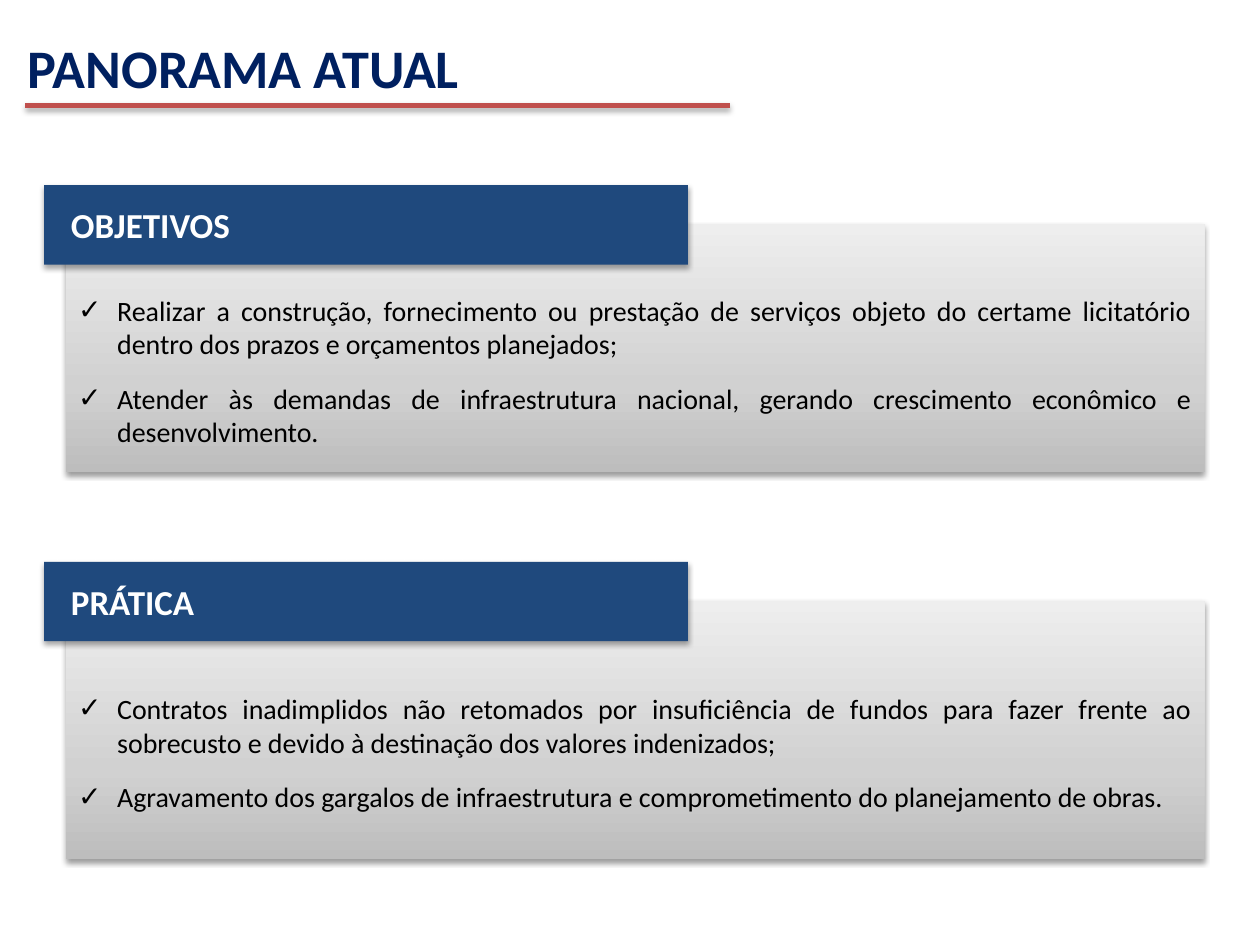
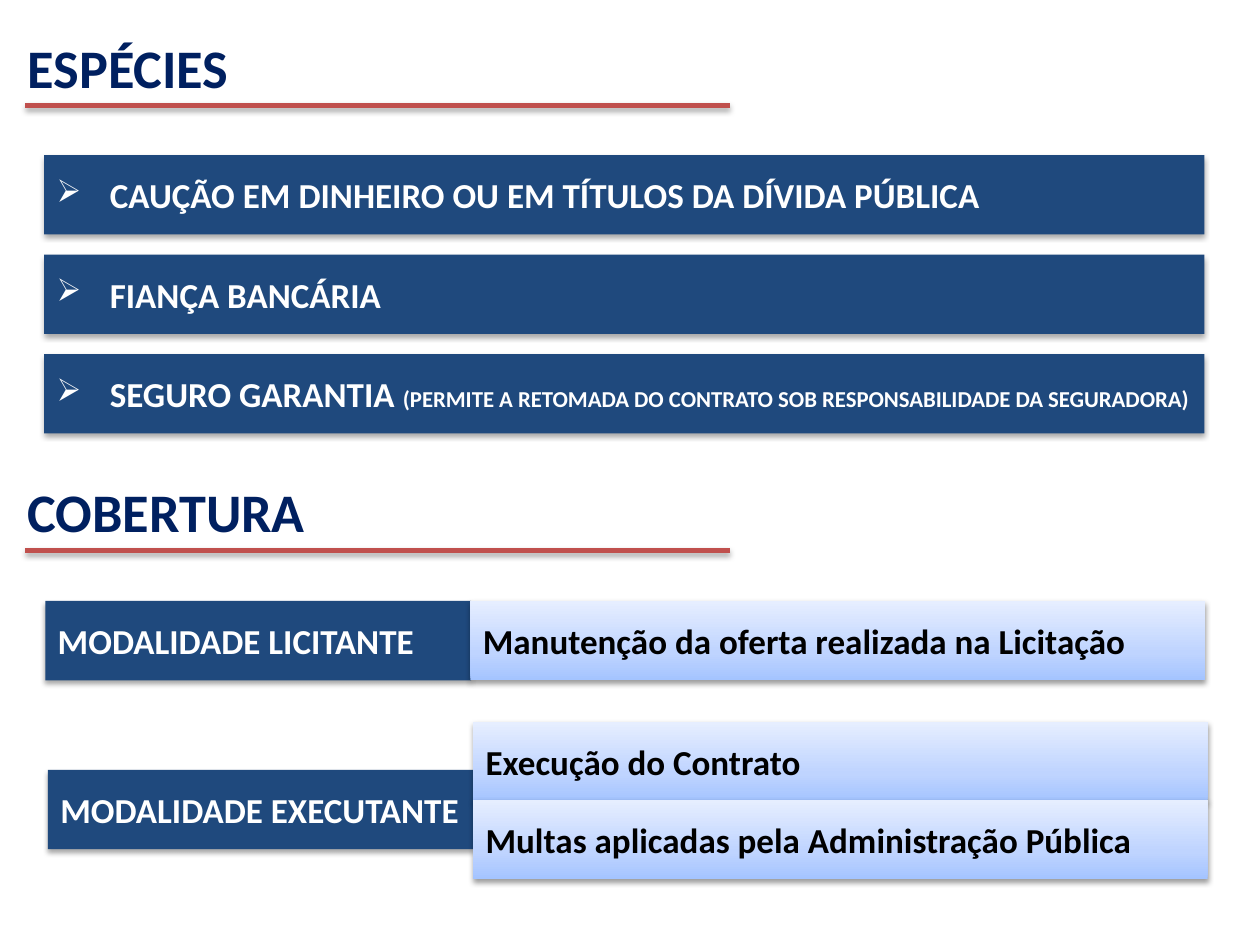
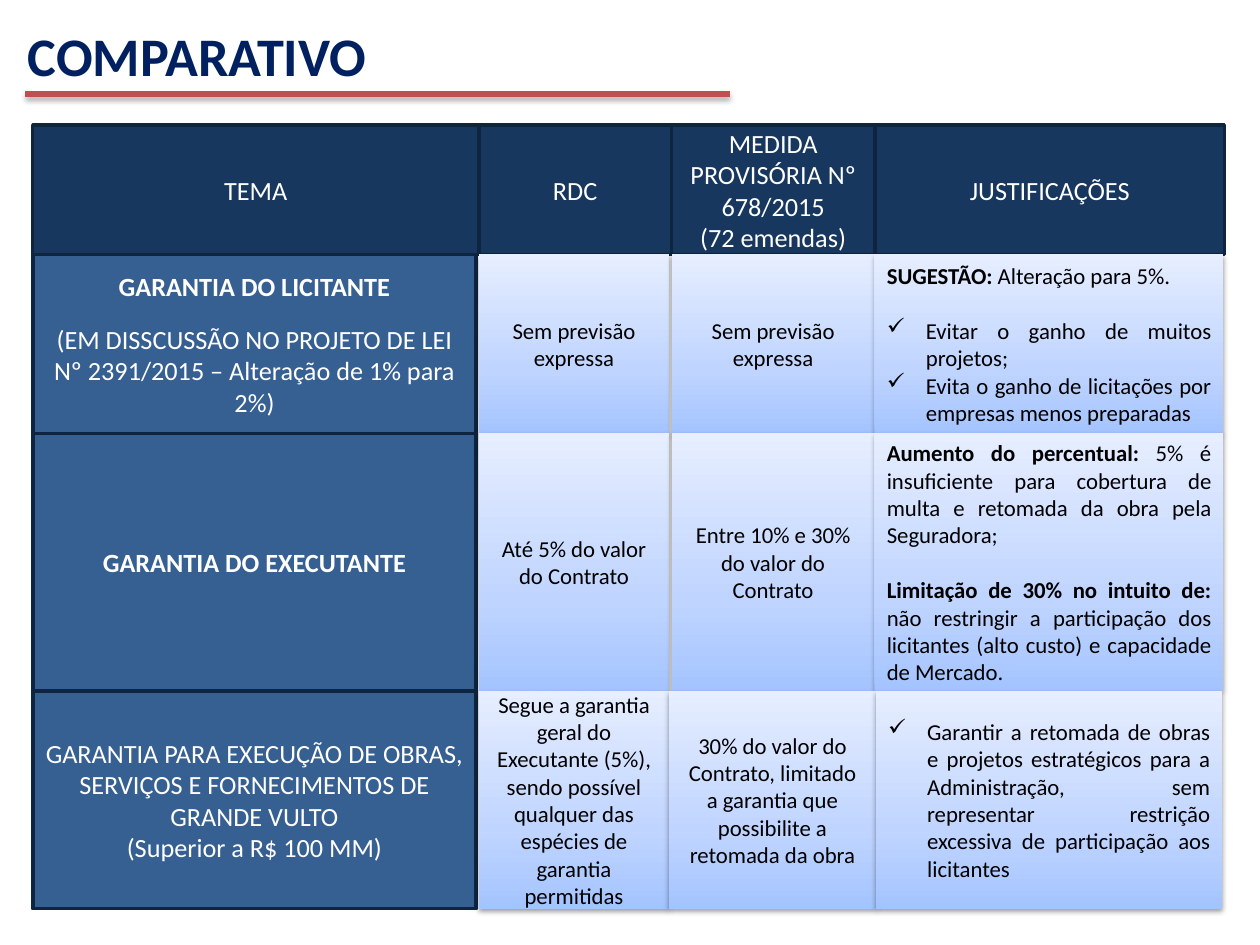
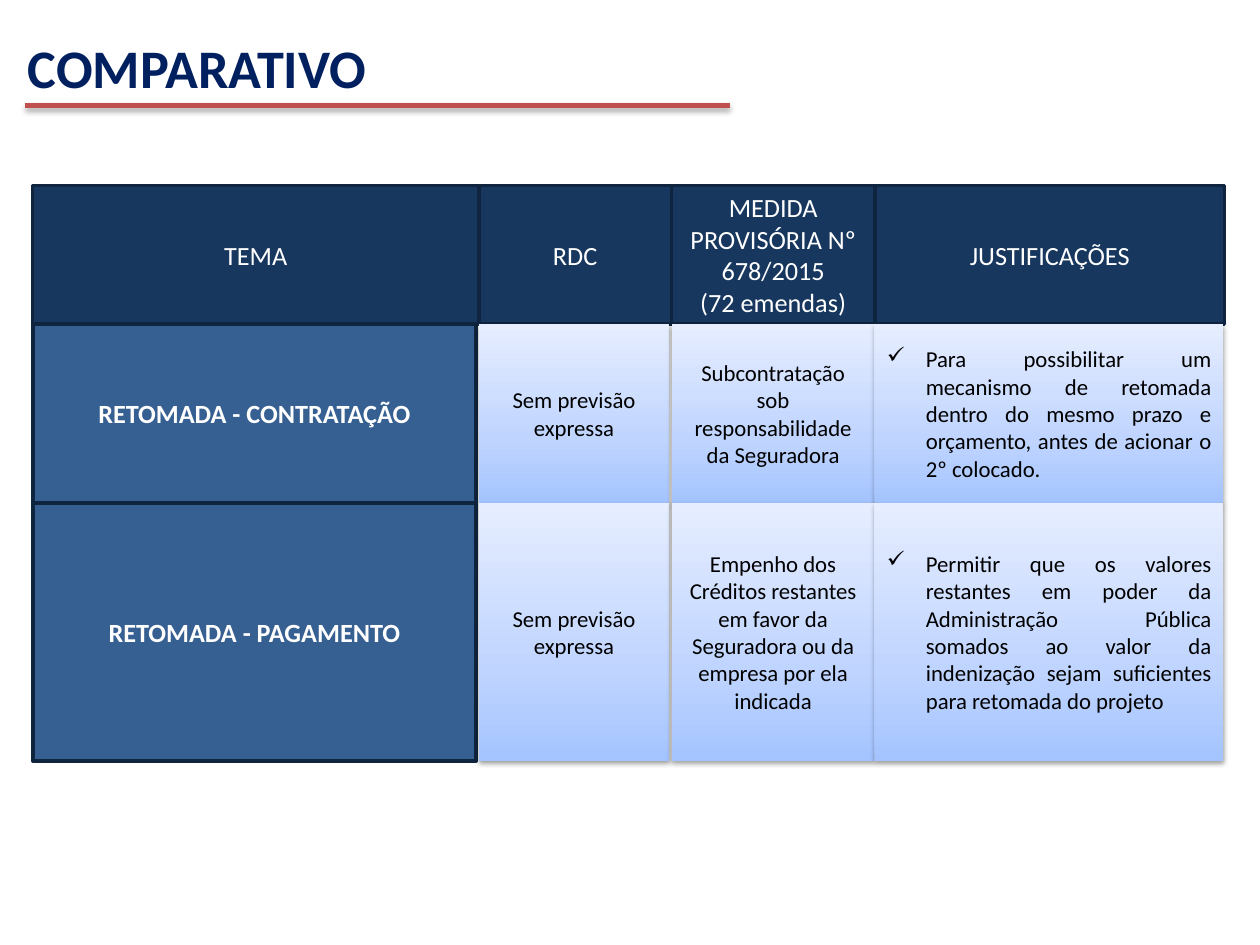
"""Build four slides on contract guarantees."""
from copy import deepcopy
from dataclasses import dataclass, replace
from itertools import accumulate
from typing import Any, NamedTuple, Optional

from lxml import etree
from pptx import Presentation
from pptx import util as u
from pptx.dml.color import RGBColor
from pptx.enum import shapes, text
from pptx.oxml import ns

NAVY = RGBColor(0x00, 0x20, 0x60)
BLUE = RGBColor(0x1F, 0x49, 0x7D)
STEEL = RGBColor(0x37, 0x60, 0x92)
DEEP = RGBColor(0x17, 0x37, 0x5E)
EDGE = RGBColor(0x0F, 0x24, 0x3E)
RED = RGBColor(0xC0, 0x50, 0x4D)
WHITE = RGBColor(0xFF, 0xFF, 0xFF)
BLACK = RGBColor(0x00, 0x00, 0x00)
GREYS = (RGBColor(0xBD, 0xBD, 0xBD), RGBColor(0xD1, 0xD1, 0xD1), RGBColor(0xEE, 0xEE, 0xEE))
SKIES = (RGBColor(0xA4, 0xC4, 0xFF), RGBColor(0xBF, 0xD4, 0xFF), RGBColor(0xE6, 0xEE, 0xFF))
STOPS = (0, 0.35, 1)
FONT = "Calibri"
CHECK, ARROW = "✓", "➢"
LEFT, MID, BOTH = text.PP_ALIGN.LEFT, text.PP_ALIGN.CENTER, text.PP_ALIGN.JUSTIFY
BAR = 45.36
HEADS = ((18.72, 254.88), (273.6, 110.16), (383.76, 116.2), (500.2, 199.44))
CELLS = ((18.72, 253.44), (273.6, 108.72), (383.76, 115.92), (499.68, 199.44))
LAST = (*CELLS[:2], (382.32, 118.08), (500.4, 198))


class Box(NamedTuple):
    """Place and size in points."""
    left: float
    top: float
    width: float
    height: float


class Run(NamedTuple):
    """A stretch of text; size 0 takes the style's size."""
    text: str
    bold: bool = False
    size: float = 0


class Line(NamedTuple):
    """A paragraph with its space before and bullet."""
    runs: tuple[Run, ...]
    gap: float = 0
    mark: str = ""


class Row(NamedTuple):
    """A grid row: height, cell texts and column spans."""
    height: float
    cells: tuple[list[Line], ...]
    cols: tuple[tuple[float, float], ...] = CELLS


@dataclass(frozen=True)
class Style:
    """Look of a box and its text."""
    fill: tuple[RGBColor, ...]
    ink: RGBColor
    size: float
    align: Any = LEFT
    edge: Optional[RGBColor] = None
    shade: int = 0
    drop: float = 0
    inset: float = 7.2
    head: float = 3.6
    hang: float = 22.32
    dot: int = 100


TAB = Style((BLUE,), WHITE, 20, shade=35, drop=1.8)
BADGE = replace(TAB, inset=15.3)
ITEM = replace(TAB, hang=30.5, dot=90)
PANEL = Style(GREYS, BLACK, 16, BOTH, shade=38, drop=1.6, head=29.1)
VALUE = Style(SKIES, BLACK, 20, shade=38, drop=1.6)
HEAD = Style((DEEP,), WHITE, 15, MID, EDGE)
THEME = replace(HEAD, fill=(STEEL,))
FACT = replace(VALUE, size=13, align=MID)
CAUSE = replace(FACT, align=BOTH)


def put(item: Any, **vals: Any) -> None:
    """Set attributes from format values."""
    for name, val in vals.items():
        setattr(item, name, val)


def one(words: str, bold: bool = False, gap: float = 0, mark: str = "") -> Line:
    """Make a paragraph of a single run."""
    return Line((Run(words, bold),), gap, mark)


def shade(item: Any, alpha: int, drop: float) -> None:
    """Add a downward shadow, or an empty effect list."""
    lst = etree.SubElement(item._element.spPr, ns.qn("a:effectLst"))
    if alpha:
        cast = etree.SubElement(lst, ns.qn("a:outerShdw"), blurRad=str(u.Pt(3.1)),
                                dist=str(u.Pt(drop)), dir="5400000", rotWithShape="0")
        tint = etree.SubElement(cast, ns.qn("a:srgbClr"), val=str(BLACK))
        etree.SubElement(tint, ns.qn("a:alpha"), val=str(alpha * 1000))


def blend(item: Any, tints: tuple[RGBColor, ...]) -> None:
    """Fill with a three-stop gradient rising from the bottom."""
    item.fill.gradient()
    item.fill.gradient_angle = 90
    lst = item._element.spPr.find(".//" + ns.qn("a:gsLst"))
    lst.insert(1, deepcopy(lst[0]))
    for stop, tint, pos in zip(item.fill.gradient_stops, tints, STOPS):
        stop.color.rgb = tint
        stop.position = pos


def place(item: Any, box: Box) -> None:
    """Move and size a shape."""
    put(item, **{name: u.Pt(val) for name, val in box._asdict().items()})


def write(item: Any, lines: list[Line], look: Style) -> None:
    """Write paragraphs into a shape."""
    frame = item.text_frame
    for num, line in enumerate(lines):
        para = frame.add_paragraph() if num else frame.paragraphs[0]
        if line.mark:
            props = para._p.get_or_add_pPr()
            props.set("marL", str(u.Pt(look.hang)))
            props.set("indent", str(-u.Pt(look.hang)))
            etree.SubElement(props, ns.qn("a:buSzPct"), val=str(look.dot * 1000))
            etree.SubElement(props, ns.qn("a:buChar"), char=line.mark)
        put(para, alignment=look.align, space_before=u.Pt(line.gap), space_after=u.Pt(0))
        for part in line.runs:
            run = para.add_run()
            run.text = part.text
            put(run.font, name=FONT, size=u.Pt(part.size or look.size), bold=part.bold)
            run.font.color.rgb = look.ink


def paint(item: Any, box: Box, look: Style, lines: list[Line]) -> None:
    """Format a shape or placeholder and fill in its text."""
    place(item, box)
    if len(look.fill) > 1:
        blend(item, look.fill)
    else:
        item.fill.solid()
        item.fill.fore_color.rgb = look.fill[0]
    if look.edge:
        item.line.color.rgb = look.edge
        item.line.width = u.Pt(2)
    else:
        item.line.fill.background()
    shade(item, look.shade, look.drop)
    put(item.text_frame, word_wrap=True, auto_size=text.MSO_AUTO_SIZE.NONE,
        vertical_anchor=text.MSO_ANCHOR.MIDDLE, margin_left=u.Pt(look.inset),
        margin_right=u.Pt(7.2), margin_top=u.Pt(look.head), margin_bottom=u.Pt(3.6))
    write(item, lines, look)


def rect(slide: Any, box: Box, look: Style, lines: list[Line]) -> None:
    """Add a formatted rectangle."""
    item = slide.shapes.add_shape(shapes.MSO_SHAPE.RECTANGLE, *map(u.Pt, box))
    paint(item, box, look, lines)


def title(slide: Any, words: str, top: float = 15.84, extra: bool = False) -> None:
    """Write a heading with its red rule."""
    box = Box(8.64, top, 527.04, 33.12)
    item = slide.shapes.add_textbox(*map(u.Pt, box)) if extra else slide.shapes.title
    place(item, box)
    put(item.text_frame, word_wrap=True, auto_size=text.MSO_AUTO_SIZE.NONE,
        vertical_anchor=text.MSO_ANCHOR.TOP)
    write(item, [one(words, True)], Style((), NAVY, 31))
    high = u.Pt(top + 44.4)
    rule = slide.shapes.add_connector(shapes.MSO_CONNECTOR.STRAIGHT,
                                      u.Pt(14.4), high, u.Pt(416.88), high)
    rule.line.color.rgb = RED
    rule.line.width = u.Pt(3)
    shade(rule, 35, 1.8)


def grid(slide: Any, top: float, high: float, rows: list[Row]) -> None:
    """Draw the comparison grid under its header row."""
    names = ([one("TEMA")], [one("RDC")],
             [one("MEDIDA PROVISÓRIA Nº 678/2015"), one("(72 emendas)")],
             [one("JUSTIFICAÇÕES")])
    rows = [Row(high, names, HEADS), *rows]
    tops = accumulate((row.height for row in rows), initial=top)
    for num, (row, y) in enumerate(zip(rows, tops)):
        looks = (THEME, FACT, FACT, CAUSE) if num else (HEAD,) * 4
        for (x, wide), look, lines in zip(row.cols, looks, row.cells):
            rect(slide, Box(x, y, wide, row.height), look, lines)


def outlook(slide: Any) -> None:
    """Slide 1: goals against practice."""
    title(slide, "PANORAMA ATUAL")
    parts = (
        (128.16, 141.84, "OBJETIVOS",
         "Realizar a construção, fornecimento ou prestação de serviços objeto do certame "
         "licitatório dentro dos prazos e orçamentos planejados;",
         "Atender às demandas de infraestrutura nacional, gerando crescimento econômico e "
         "desenvolvimento."),
        (343.44, 147.6, "PRÁTICA",
         "Contratos inadimplidos não retomados por insuficiência de fundos para fazer frente "
         "ao sobrecusto e devido à destinação dos valores indenizados;",
         "Agravamento dos gargalos de infraestrutura e comprometimento do planejamento de "
         "obras."),
    )
    bodies = list(slide.placeholders)[1:]
    for body, (top, high, name, first, then) in zip(bodies, parts):
        lines = [one(first, mark=CHECK), one(then, gap=12, mark=CHECK)]
        paint(body, Box(37.44, top, 650.88, high), PANEL, lines)
        rect(slide, Box(25.2, top - 22.32, 367.92, BAR), BADGE, [one(name, True)])


def kinds(slide: Any) -> None:
    """Slide 2: kinds of guarantee and their cover."""
    title(slide, "ESPÉCIES")
    items = (
        (Run("CAUÇÃO EM DINHEIRO OU EM TÍTULOS DA DÍVIDA PÚBLICA", True),),
        (Run("FIANÇA BANCÁRIA", True),),
        (Run("SEGURO GARANTIA ", True),
         Run("(PERMITE A RETOMADA DO CONTRATO SOB RESPONSABILIDADE DA SEGURADORA)", True, 13)),
    )
    for num, runs in enumerate(items):
        rect(slide, Box(25.2, 88.6 + 56.9 * num, 663.12, BAR), ITEM, [Line(runs, mark=ARROW)])
    title(slide, "COBERTURA", 270, True)
    covers = (
        (25.92, 343.44, 243.36, TAB, "MODALIDADE LICITANTE"),
        (27.36, 439.92, 243.36, TAB, "MODALIDADE EXECUTANTE"),
        (268.8, 343.44, 419.76, VALUE, "Manutenção da oferta realizada na Licitação"),
        (270.4, 412.56, 419.76, VALUE, "Execução do Contrato"),
        (270.4, 457.2, 419.76, VALUE, "Multas aplicadas pela Administração Pública"),
    )
    for x, y, wide, look, words in covers:
        rect(slide, Box(x, y, wide, BAR), look, [one(words, True)])


def bonds(slide: Any) -> None:
    """Slide 3: comparison of the guarantees."""
    title(slide, "COMPARATIVO", 9.36)
    grid(slide, 71.5, 73.9, [
        Row(102.3, (
            [one("GARANTIA DO LICITANTE", True),
             one("(EM DISSCUSSÃO NO PROJETO DE LEI Nº 2391/2015 – Alteração de 1% para 2%)",
                 gap=12)],
            [one("Sem previsão expressa")],
            [one("Sem previsão expressa")],
            [Line((Run("SUGESTÃO: ", True), Run("Alteração para 5%."))),
             one("Evitar o ganho de muitos projetos;", gap=15.9, mark=CHECK),
             one("Evita o ganho de licitações por empresas menos preparadas", mark=CHECK)])),
        Row(147.1, (
            [one("GARANTIA DO EXECUTANTE", True)],
            [one("Até 5% do valor do Contrato")],
            [one("Entre 10% e 30% do valor do Contrato")],
            [Line((Run("Aumento do percentual: ", True),
                   Run("5% é insuficiente para cobertura de multa e retomada da obra pela "
                       "Seguradora;"))),
             Line((Run("Limitação de 30% no intuito de: ", True),
                   Run("não restringir a participação dos licitantes (alto custo) e "
                       "capacidade de Mercado.")), 15.9)])),
        Row(124.5, (
            [one("GARANTIA PARA EXECUÇÃO DE OBRAS, SERVIÇOS E FORNECIMENTOS DE GRANDE VULTO"),
             one("(Superior a R$ 100 MM)")],
            [one("Segue a garantia geral do Executante (5%), sendo possível qualquer das "
                 "espécies de garantia permitidas")],
            [one("30% do valor do Contrato, limitado a garantia que possibilite a retomada "
                 "da obra")],
            [one("Garantir a retomada de obras e projetos estratégicos para a Administração, "
                 "sem representar restrição excessiva de participação aos licitantes",
                 mark=CHECK)]), LAST),
    ])


def resume(slide: Any) -> None:
    """Slide 4: comparison of the resumption rules."""
    title(slide, "COMPARATIVO")
    grid(slide, 105.9, 79.2, [
        Row(102.3, (
            [one("RETOMADA - CONTRATAÇÃO", True)],
            [one("Sem previsão expressa")],
            [one("Subcontratação sob responsabilidade da Seguradora")],
            [one("Para possibilitar um mecanismo de retomada dentro do mesmo prazo e "
                 "orçamento, antes de acionar o 2º colocado.", mark=CHECK)])),
        Row(147.4, (
            [one("RETOMADA - PAGAMENTO", True)],
            [one("Sem previsão expressa")],
            [one("Empenho dos Créditos restantes em favor da Seguradora ou da empresa por "
                 "ela indicada")],
            [one("Permitir que os valores restantes em poder da Administração Pública "
                 "somados ao valor da indenização sejam suficientes para retomada do projeto",
                 mark=CHECK)])),
    ])


def main() -> None:
    """Build and save the deck."""
    deck = Presentation()
    put(deck, slide_width=u.Pt(720), slide_height=u.Pt(540))
    for draw, kind in ((outlook, 3), (kinds, 5), (bonds, 5), (resume, 5)):
        draw(deck.slides.add_slide(deck.slide_layouts[kind]))
    deck.save("out.pptx")


if __name__ == "__main__":
    main()
